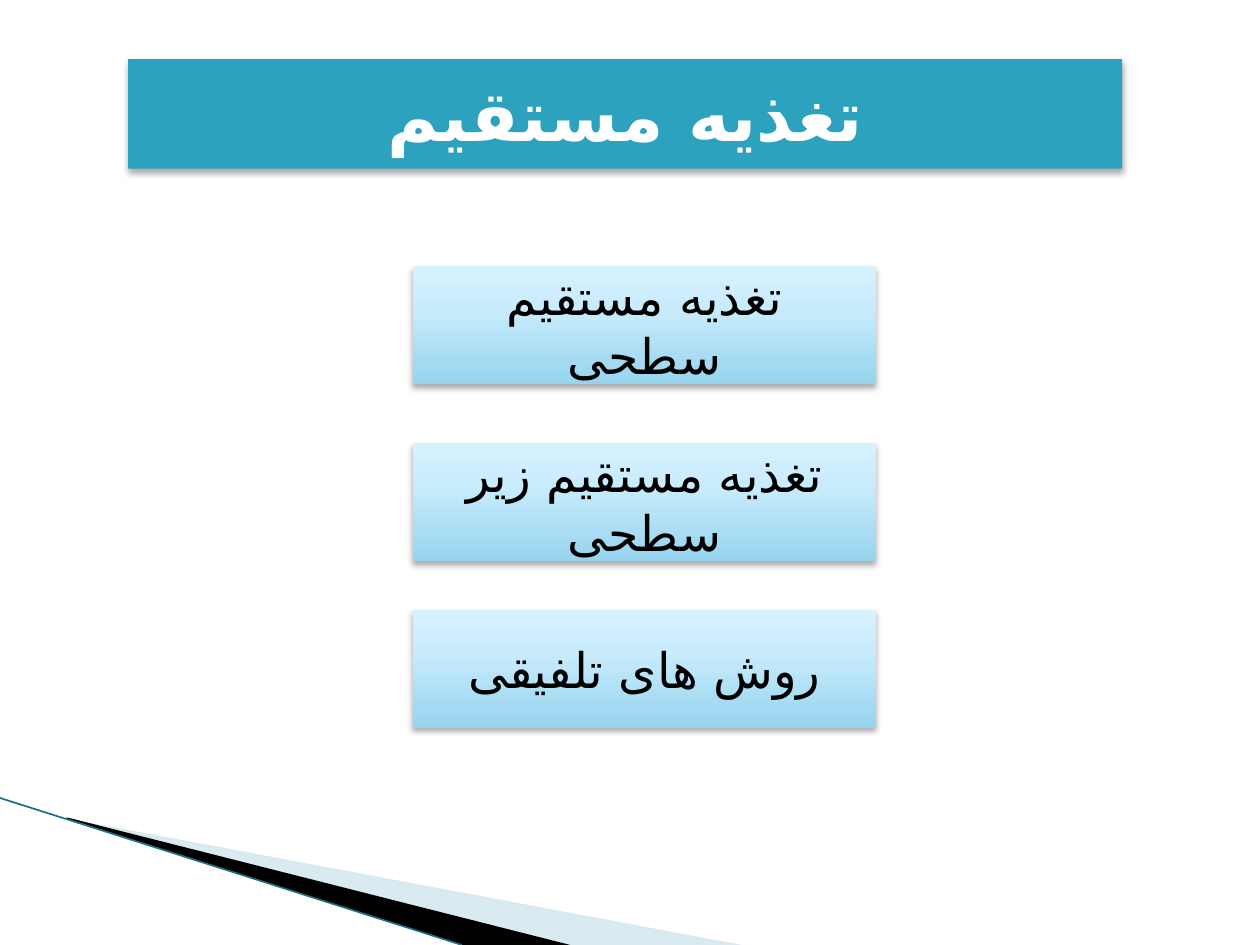
from lxml import etree
from pptx import Presentation
from pptx import util as u
from pptx.dml.color import RGBColor
from pptx.enum import shapes, text
from pptx.oxml import parse_xml
from pptx.oxml.ns import nsdecls, qn

COLORS = {
    "banner": "2DA2BF",
    "banner_text": "FFFFFF",
    "dark": "000000",
    "pale_wedge": "A0CBDC",
    "edge": "1B7085",
}
BUTTON_STOPS = [(0, "96D4EE"), (65, "C9ECFC"), (100, "D7F2FF")]
FONT = "Times New Roman"
ARABIC_FONT = "DejaVu Sans"
TITLE = "تغذیه مستقیم"
METHODS = [
    ("تغذیه مستقیم سطحی", 152),
    ("تغذیه مستقیم زیر سطحی", 253.2),
    ("روش های تلفیقی", 348.5),
]


def color(name):
    return RGBColor.from_string(COLORS[name])


def add_shadow(shape):
    shape._element.spPr.append(parse_xml(
        f'<a:effectLst {nsdecls("a")}>'
        f'<a:outerShdw blurRad="{u.Pt(3.5)}" dist="{u.Pt(2.2)}" dir="5400000" rotWithShape="0">'
        f'<a:srgbClr val="{COLORS["dark"]}"><a:alpha val="32000"/></a:srgbClr>'
        '</a:outerShdw></a:effectLst>'))


def fill_gradient(shape):
    stops = "".join(
        f'<a:gs pos="{position * 1000}"><a:srgbClr val="{value}"/></a:gs>'
        for position, value in BUTTON_STOPS)
    geometry = shape._element.spPr.find(qn("a:prstGeom"))
    geometry.addnext(parse_xml(
        f'<a:gradFill {nsdecls("a")} rotWithShape="1"><a:gsLst>{stops}</a:gsLst>'
        '<a:lin ang="16200000" scaled="0"/></a:gradFill>'))


def set_text(shape, words, size, color_name, bold=False):
    frame = shape.text_frame
    frame.text = words
    frame.word_wrap = True
    frame.auto_size = text.MSO_AUTO_SIZE.NONE
    frame.vertical_anchor = text.MSO_ANCHOR.MIDDLE
    para = frame.paragraphs[0]
    para.alignment = text.PP_ALIGN.CENTER
    para._p.get_or_add_pPr().set("rtl", "1")
    span = para.runs[0]
    span.font.name = FONT
    span.font.size = u.Pt(size)
    span.font.bold = bold
    span.font.color.rgb = color(color_name)
    script_font = etree.SubElement(span._r.get_or_add_rPr(), qn("a:cs"))
    script_font.set("typeface", ARABIC_FONT)


def add_banner(page, left, top, width, height):
    title = page.shapes.title
    title.left, title.top = u.Pt(left), u.Pt(top)
    title.width, title.height = u.Pt(width), u.Pt(height)
    title.fill.solid()
    title.fill.fore_color.rgb = color("banner")
    add_shadow(title)
    set_text(title, TITLE, 40, "banner_text", bold=True)


def add_button(page, words, left, top, width, height):
    button = page.shapes.add_shape(
        shapes.MSO_SHAPE.ACTION_BUTTON_CUSTOM,
        u.Pt(left), u.Pt(top), u.Pt(width), u.Pt(height))
    fill_gradient(button)
    button.line.fill.background()
    add_shadow(button)
    set_text(button, words, 28, "dark")


def add_wedge(page, left, top, points, color_name):
    corners = [(left + x, top + y) for x, y in points]
    builder = page.shapes.build_freeform(*corners[0], scale=u.Pt(1))
    builder.add_line_segments(corners[1:], close=True)
    wedge = builder.convert_to_shape()
    wedge.shadow.inherit = False
    wedge.fill.solid()
    wedge.fill.fore_color.rgb = color(color_name)
    wedge.line.fill.background()
    return wedge


def add_corner(page, left, top, width, height):
    pale = add_wedge(page, left, top,
                     [(39.6, 12), (424.5, height), (326, height)], "pale_wedge")
    value = pale._element.spPr.find(".//" + qn("a:srgbClr"))
    etree.SubElement(value, qn("a:alpha")).set("val", "40000")
    add_wedge(page, left, top,
              [(38.2, 11.3), (326.5, height), (264, height), (38.9, 12.4)], "dark")
    edge = page.shapes.add_connector(
        shapes.MSO_CONNECTOR.STRAIGHT,
        u.Pt(left), u.Pt(top), u.Pt(left + width), u.Pt(top + height))
    edge.line.color.rgb = color("edge")
    edge.line.width = u.Pt(0.95)
    etree.SubElement(edge._element.spPr, qn("a:effectLst"))


def main():
    deck = Presentation()
    deck.slide_width, deck.slide_height = u.Pt(720), u.Pt(540)
    page = deck.slides.add_slide(deck.slide_layouts[5])
    add_corner(page, 0, 456, 264, 84)
    add_banner(page, 73.2, 33.8, 568, 62.6)
    for words, top in METHODS:
        add_button(page, words, 236, top, 264.4, 67.5)
    deck.save("out.pptx")


if __name__ == "__main__":
    main()
